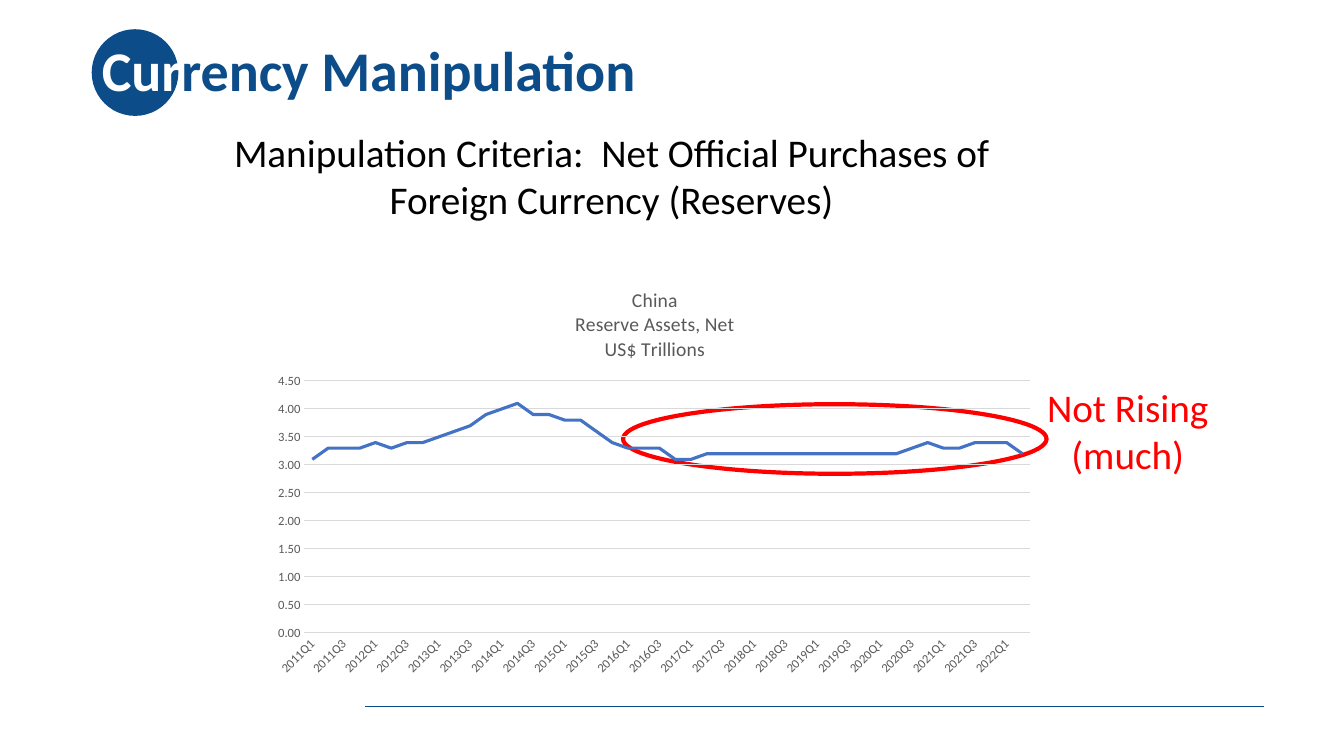
from lxml import etree
from pptx import Presentation
from pptx.chart.data import CategoryChartData
from pptx.dml.color import RGBColor
from pptx.enum.chart import XL_CHART_TYPE, XL_TICK_MARK
from pptx.enum.shapes import MSO_CONNECTOR, MSO_SHAPE
from pptx.enum.text import MSO_ANCHOR, MSO_AUTO_SIZE, PP_ALIGN
from pptx.oxml import parse_xml
from pptx.oxml.ns import nsdecls, qn
from pptx.util import Inches, Pt

NAVY, RED, GREY, GRID = "0C4C88", "FF0000", "595959", "D9D9D9"
RESERVES = [
    3.1, 3.3, 3.3, 3.3, 3.4, 3.3, 3.4, 3.4, 3.5, 3.6, 3.7, 3.9,
    4.0, 4.1, 3.9, 3.9, 3.8, 3.8, 3.6, 3.4, 3.3, 3.3, 3.3, 3.1,
    3.1, 3.2, 3.2, 3.2, 3.2, 3.2, 3.2, 3.2, 3.2, 3.2, 3.2, 3.2,
    3.2, 3.2, 3.3, 3.4, 3.3, 3.3, 3.4, 3.4, 3.4, 3.2,
]
QUARTERS = [f"{2011 + i // 4}Q{i % 4 + 1}" for i in range(len(RESERVES))]


def rgb(color):
    return RGBColor.from_string(color)


def style_font(font, size, color, name="Calibri", bold=False):
    font.name, font.size, font.bold = name, Pt(size), bold
    font.color.rgb = rgb(color)


def add_text(p, text, size=28, color="000000", align=None, bold=False):
    r = p.add_run()
    r.text = text
    style_font(r.font, size, color, bold=bold)
    if align is not None:
        p.alignment = align


def style_line(line, color, width):
    line.color.rgb = rgb(color)
    line.width = Pt(width)


class SlideBuilder:
    def __init__(self, prs):
        self.s = prs.slides.add_slide(prs.slide_layouts[5])

    def rule(self, x1, x2, y):
        line = self.s.shapes.add_connector(
            MSO_CONNECTOR.STRAIGHT, Inches(x1), Inches(y), Inches(x2), Inches(y))
        style_line(line.line, NAVY, 0.5)
        etree.SubElement(line._element.spPr, qn("a:effectLst"))

    def ellipse(self, *box, fill=None, outline=None, width=3):
        sp = self.s.shapes.add_shape(MSO_SHAPE.OVAL, *map(Inches, box))
        sp.shadow.inherit = False
        if fill:
            sp.fill.solid()
            sp.fill.fore_color.rgb = rgb(fill)
        else:
            sp.fill.background()
        if outline:
            style_line(sp.line, outline, width)
        else:
            sp.line.fill.background()

    def title(self, *box, parts):
        sp = self.s.shapes.title
        sp.left, sp.top, sp.width, sp.height = map(Inches, box)
        self.s.shapes._spTree.append(sp._element)
        tf = sp.text_frame
        tf.auto_size = MSO_AUTO_SIZE.NONE
        tf.vertical_anchor = MSO_ANCHOR.MIDDLE
        p = tf.paragraphs[0]
        p.line_spacing = 0.9
        for text, color in parts:
            add_text(p, text, size=40, color=color, align=PP_ALIGN.LEFT, bold=True)

    def text(self, *box, text, color="000000"):
        tf = self.s.shapes.add_textbox(*map(Inches, box)).text_frame
        tf.word_wrap = True
        tf.auto_size = MSO_AUTO_SIZE.SHAPE_TO_FIT_TEXT
        add_text(tf.paragraphs[0], text, color=color, align=PP_ALIGN.CENTER)

    def line_chart(self, x, y, w, h, title, categories, values, plot_box):
        data = CategoryChartData(number_format="#,##0.00")
        data.categories = categories
        data.add_series("Reserve Assets, Net", values)
        chart = self.s.shapes.add_chart(
            XL_CHART_TYPE.LINE, Inches(x), Inches(y), Inches(w), Inches(h), data).chart
        style_font(chart.font, 10, "000000")
        chart.has_legend = False
        chart.has_title = True
        tf = chart.chart_title.text_frame
        for i, text in enumerate(title):
            p = tf.add_paragraph() if i else tf.paragraphs[0]
            add_text(p, text, size=14, color=GREY)
        plot = chart.plots[0]
        plot.vary_by_categories = False
        series = plot.series[0]
        series.smooth = False
        style_line(series.format.line, "4472C4", 2.25)
        self.axes(chart)
        px, py, pw, ph = plot_box
        self.plot_area(chart, x=px / w, y=py / h, w=pw / w, h=ph / h)

    def axes(self, chart):
        cat, val = chart.category_axis, chart.value_axis
        for axis in (cat, val):
            axis.major_tick_mark = axis.minor_tick_mark = XL_TICK_MARK.NONE
            style_font(axis.tick_labels.font, 9, GREY)
        style_line(cat.format.line, GRID, 0.75)
        cat._element.txPr.find(qn("a:bodyPr")).set("rot", "-2700000")
        skip = parse_xml(f'<c:tickLblSkip {nsdecls("c")} val="2"/>')
        cat._element.find(qn("c:noMultiLvlLbl")).addprevious(skip)
        val.minimum_scale, val.maximum_scale, val.major_unit = 0, 4.5, 0.5
        val.tick_labels.number_format = "#,##0.00"
        val.tick_labels.number_format_is_linked = False
        val.format.line.fill.background()
        style_line(val.major_gridlines.format.line, GRID, 0.75)

    def plot_area(self, chart, **frame):
        area = chart._chartSpace.chart.plotArea
        for old in area.findall(qn("c:layout")):
            area.remove(old)
        sizes = "".join(f'<c:{k} val="{v}"/>' for k, v in frame.items())
        area.insert(0, parse_xml(
            f'<c:layout {nsdecls("c")}><c:manualLayout>'
            '<c:layoutTarget val="inner"/><c:xMode val="edge"/><c:yMode val="edge"/>'
            f'{sizes}</c:manualLayout></c:layout>'))


def main():
    prs = Presentation()
    prs.slide_width, prs.slide_height = Inches(13.33), Inches(7.5)
    slide = SlideBuilder(prs)
    slide.rule(3.62, 12.54, 7.01)
    slide.ellipse(0.91, 0.29, 0.86, 0.86, fill=NAVY)
    slide.title(0.91, 0, 11.5, 1.45,
                parts=[("Cur", "FFFFFF"), ("rency Manipulation", NAVY)])
    slide.ellipse(6.18, 4.01, 4.2, 0.69, outline=RED)
    slide.text(10.1, 3.75, 2.17, 1.04, text="Not Rising (much)", color=RED)
    slide.text(2.18, 1.22, 7.77, 1.04,
               text="Manipulation Criteria:  Net Official Purchases of "
                    "Foreign Currency (Reserves)")
    slide.line_chart(2.61, 2.68, 7.77, 4.12,
                     title=["China", "Reserve Assets, Net", "US$ Trillions"],
                     categories=QUARTERS, values=RESERVES,
                     plot_box=(0.41, 1.1, 7.2, 2.5))
    prs.save("out.pptx")


if __name__ == "__main__":
    main()
